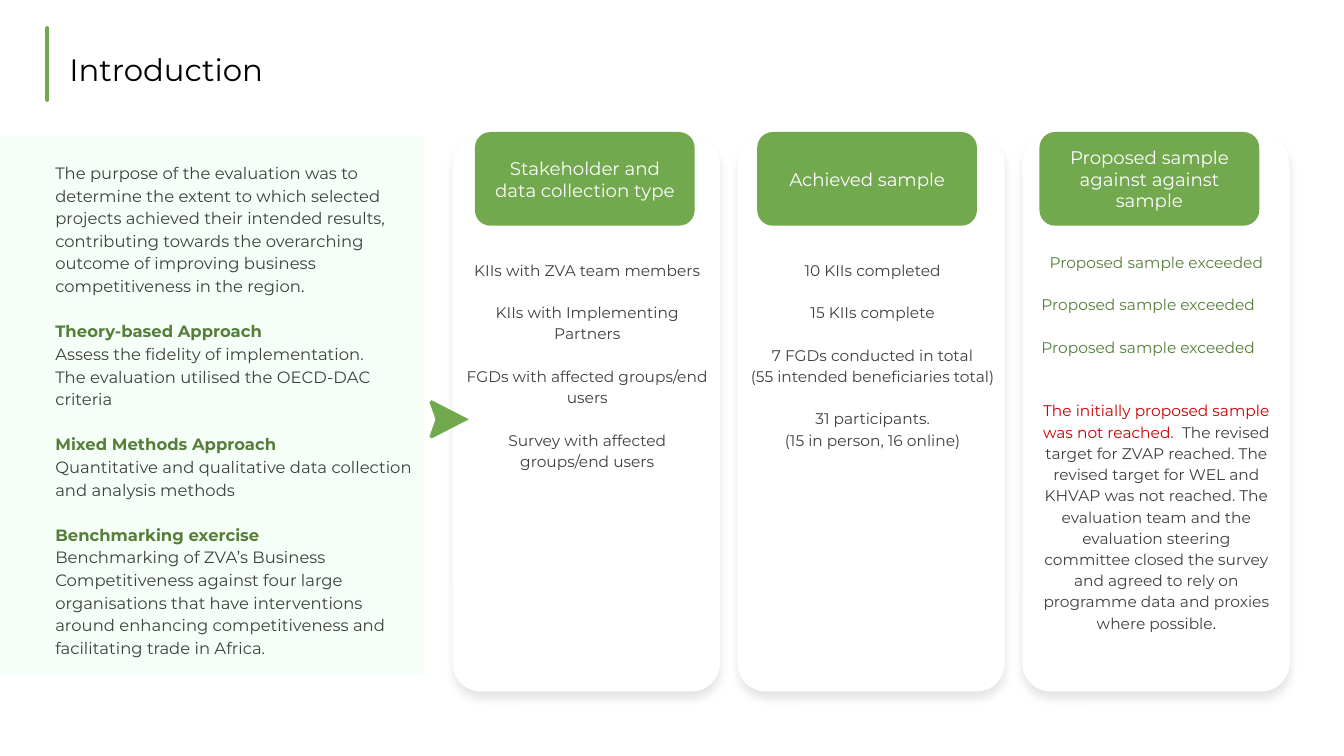
from lxml.etree import SubElement
from pptx import Presentation
from pptx.dml.color import RGBColor
from pptx.enum.shapes import MSO_CONNECTOR, MSO_SHAPE
from pptx.enum.text import MSO_ANCHOR, PP_ALIGN
from pptx.oxml.ns import qn
from pptx.util import Inches, Pt

COLORS = {
    "green": "72A84E",
    "dark_green": "557E3A",
    "mint": "F5FFF7",
    "white": "FFFFFF",
    "black": "000000",
    "body": "3F3F3F",
    "charcoal": "262626",
    "ink": "0E101A",
    "red": "CC0000",
}

INTRODUCTION = [
    {"runs": [("The purpose of the evaluation was to determine the extent to which selected "
               "projects achieved their intended results, contributing towards the overarching "
               "outcome of improving business competitiveness in the region", "body"),
              (".", "charcoal")]},
    {"text": "Theory-based Approach", "color": "dark_green", "bold": True, "gap": 1},
    {"text": "Assess the fidelity of implementation."},
    {"text": "The evaluation utilised the OECD-DAC criteria"},
    {"text": "Mixed Methods Approach", "color": "dark_green", "bold": True, "gap": 1},
    {"text": "Quantitative and qualitative data collection and analysis methods"},
    {"text": "Benchmarking exercise", "color": "dark_green", "bold": True, "gap": 1},
    {"text": "Benchmarking of ZVA’s Business Competitiveness against four large organisations "
             "that have interventions around enhancing competitiveness and facilitating trade "
             "in Africa."},
]

STAKEHOLDERS = [
    {"text": "KIIs with ZVA team members"},
    {"text": "KIIs with Implementing Partners", "gap": 1},
    {"text": "FGDs with affected groups/end users", "gap": 1},
    {"text": "Survey with affected groups/end users", "gap": 1},
]

ACHIEVED = [
    {"text": "10 KIIs completed"},
    {"text": "15 KIIs complete", "gap": 1},
    {"text": "7 FGDs conducted in total", "gap": 1},
    {"text": "(55 intended beneficiaries total)"},
    {"text": "31 participants.", "gap": 1},
    {"text": "(15 in person, 16 online)"},
]

EXCEEDED = {"text": "Proposed sample exceeded", "color": "dark_green"}
PROPOSED = [
    EXCEEDED,
    {**EXCEEDED, "gap": 1, "align": PP_ALIGN.LEFT},
    {**EXCEEDED, "gap": 1, "align": PP_ALIGN.LEFT},
    {"gap": 2, "runs": [
        ("The initially proposed sample was not reached.  ", "red"),
        ("The revised target for ZVAP reached. The revised target for WEL and KHVAP was not "
         "reached. The evaluation team and the evaluation steering committee closed the survey "
         "and agreed to rely on programme data and proxies where possible", "body"),
        (".", "ink")]},
]

COLUMNS = [
    ("Stakeholder and data collection type", STAKEHOLDERS, (4.5, 2.48, 2.65, 4.2)),
    ("Achieved sample", ACHIEVED, (7.33, 2.48, 2.65, 4.2)),
    ("Proposed sample against against sample", PROPOSED, (10.25, 2.4, 2.44, 4.2)),
]

ARROW_POINTS = [(4.65, 4.16), (4.28, 4.35), (4.26, 4.33), (4.32, 4.16), (4.26, 3.99), (4.28, 3.97)]


def color(name):
    return RGBColor.from_string(COLORS[name])


def paint(shape, fill):
    shape.shadow.inherit = False
    shape.fill.solid()
    shape.fill.fore_color.rgb = color(fill)
    shape.line.fill.background()


def add_panel(slide, box, fill, radius=None):
    preset = MSO_SHAPE.RECTANGLE if radius is None else MSO_SHAPE.ROUNDED_RECTANGLE
    shape = slide.shapes.add_shape(preset, *map(Inches, box))
    if radius is not None:
        shape.adjustments[0] = radius
    paint(shape, fill)
    return shape


def add_soft_shadow(shape):
    effects = shape._element.spPr.find(qn("a:effectLst"))
    shadow = SubElement(effects, qn("a:outerShdw"), blurRad=str(Pt(6.8)), dist=str(Pt(4.5)),
                        dir="5400000", algn="t", rotWithShape="0")
    tint = SubElement(shadow, qn("a:srgbClr"), val=COLORS["black"])
    SubElement(tint, qn("a:alpha"), val="10000")


def set_frame(shape, horizontal, vertical, anchor):
    frame = shape.text_frame
    frame.word_wrap = True
    frame.vertical_anchor = anchor
    frame.margin_left = frame.margin_right = Inches(horizontal)
    frame.margin_top = frame.margin_bottom = Inches(vertical)
    return frame


def write(frame, paragraphs, size, align=PP_ALIGN.LEFT, line_spacing=1.15, default="body"):
    for index, item in enumerate(paragraphs):
        paragraph = frame.paragraphs[0] if index == 0 else frame.add_paragraph()
        paragraph.alignment = item.get("align", align)
        paragraph.line_spacing = line_spacing
        paragraph.space_before = Pt(round(item.get("gap", 0) * size * 1.38, 1))
        runs = item.get("runs") or [(item["text"], item.get("color", default))]
        for text, name in runs:
            run = paragraph.add_run()
            run.text = text
            run.font.name = "Montserrat"
            run.font.size = Pt(size)
            run.font.bold = item.get("bold", False)
            run.font.color.rgb = color(name)


def add_text(slide, box, paragraphs, size, inset=(0.1, 0.05), anchor=MSO_ANCHOR.TOP, **style):
    shape = slide.shapes.add_textbox(*map(Inches, box))
    write(set_frame(shape, *inset, anchor), paragraphs, size, **style)


def add_header(slide, left, text):
    shape = add_panel(slide, (left, 1.31, 2.18, 0.93), "green", radius=0.167)
    frame = set_frame(shape, 0.1, 0.05, MSO_ANCHOR.MIDDLE)
    write(frame, [{"text": text}], 13, align=PP_ALIGN.CENTER, line_spacing=1.0, default="white")


def add_accent_line(slide):
    line = slide.shapes.add_connector(MSO_CONNECTOR.STRAIGHT, Inches(0.47), Inches(0.28),
                                      Inches(0.47), Inches(0.99))
    line.line.color.rgb = color("green")
    line.line.width = Pt(3)
    line.line._get_or_add_ln().set("cap", "rnd")
    SubElement(line._element.spPr, qn("a:effectLst"))


def add_arrow(slide):
    points = [(Inches(x), Inches(y)) for x, y in ARROW_POINTS]
    builder = slide.shapes.build_freeform(*points[0])
    builder.add_line_segments(points[1:], close=True)
    paint(builder.convert_to_shape(), "green")


def main():
    presentation = Presentation()
    presentation.slide_width = Inches(13.33)
    presentation.slide_height = Inches(7.5)
    slide = presentation.slides.add_slide(presentation.slide_layouts[6])

    add_accent_line(slide)
    add_panel(slide, (0, 1.35, 4.21, 5.35), "mint")
    add_text(slide, (0.45, 1.54, 3.85, 5.16), INTRODUCTION, 11.7)
    for index in range(len(COLUMNS)):
        card = add_panel(slide, (4.49 + 2.825 * index, 1.35, 2.65, 5.51), "white", radius=0.106)
        add_soft_shadow(card)
    add_arrow(slide)
    for index, (heading, paragraphs, box) in enumerate(COLUMNS):
        add_text(slide, box, paragraphs, 11, inset=(0.08, 0.08), align=PP_ALIGN.CENTER)
        add_header(slide, 4.71 + 2.8 * index, heading)
    add_text(slide, (0.59, 0.29, 12.36, 0.7), [{"text": "Introduction"}], 22,
             anchor=MSO_ANCHOR.MIDDLE, line_spacing=1.26, default="black")

    presentation.save("out.pptx")


if __name__ == "__main__":
    main()
